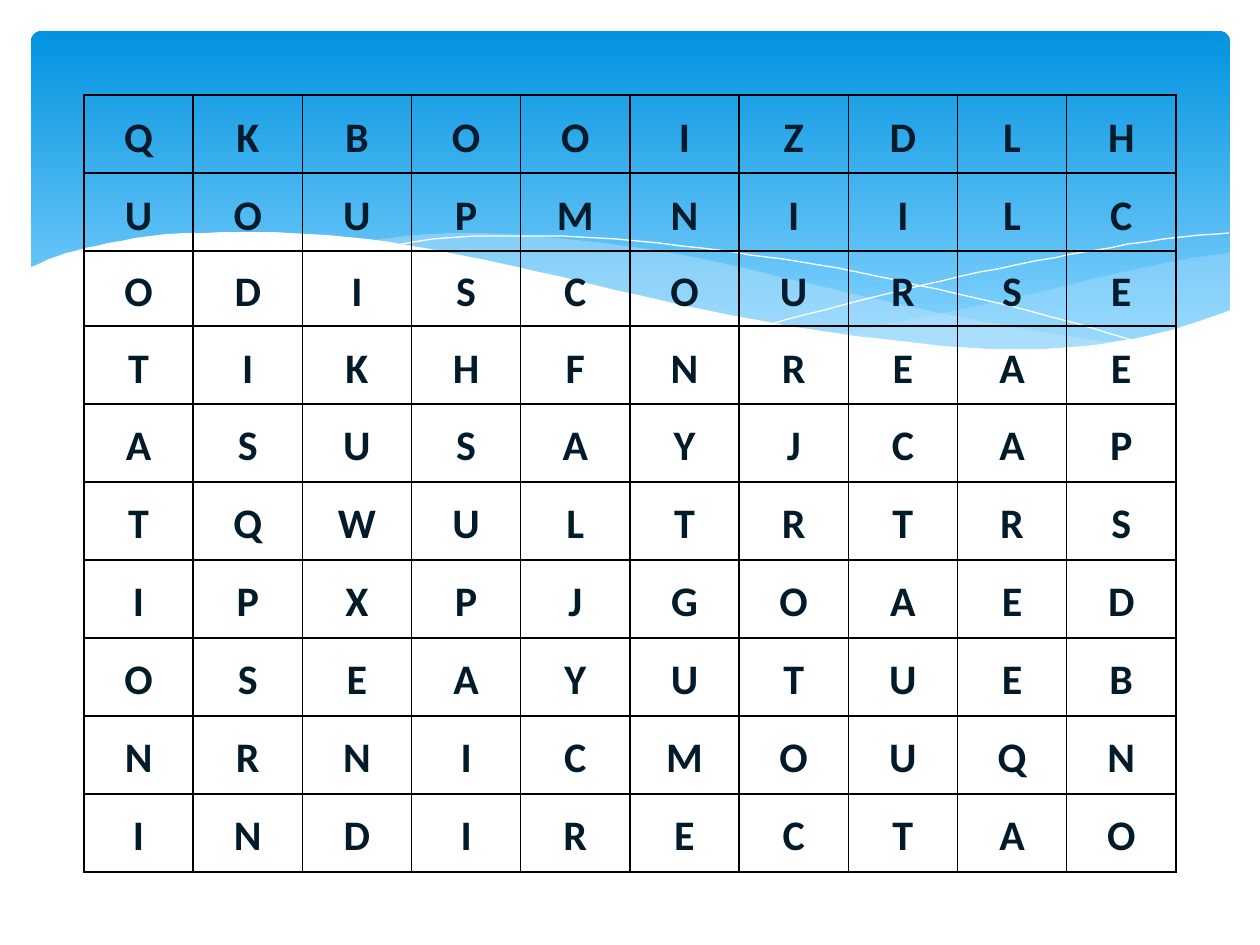
import pptx
import pptx.util
from lxml import etree
from pptx.dml.color import RGBColor
from pptx.enum.shapes import MSO_SHAPE
from pptx.enum.text import MSO_ANCHOR, PP_ALIGN
from pptx.oxml.ns import qn

EMU_PER_PX = 914400 // 126

SKY_TOP = RGBColor(0x02, 0x93, 0xE0)
SKY_BOTTOM = RGBColor(0x83, 0xD3, 0xFE)
WAVE = RGBColor(0xC6, 0xE7, 0xFC)
WHITE = RGBColor(0xFF, 0xFF, 0xFF)
BLACK = RGBColor(0x00, 0x00, 0x00)
INK = RGBColor(0x02, 0x1B, 0x2B)

LETTERS = [
    "QKBOOIZDLH",
    "UOUPMNIILC",
    "ODISCOURSE",
    "TIKHFNREAE",
    "ASUSAYJCAP",
    "TQWULTRTRS",
    "IPXPJGOAED",
    "OSEAYUTUEB",
    "NRNICMOUQN",
    "INDIRECTAO",
]
ROW_HEIGHTS = [78, 78, 75] + [78] * 7

RIGHT_WAVE_TOP = [(1230, 252), (1178, 261), (1123, 272), (1048, 290), (949, 312), (833, 334)]
RIGHT_WAVE_BOTTOM = [(833, 334), (888, 341), (954, 348), (1012, 350), (1076, 348),
                     (1130, 340), (1178, 330), (1230, 311)]
LONG_WAVE_TOP = [(1125, 344), (1055, 334), (977, 320), (890, 302), (793, 280), (717, 262),
                 (648, 249), (586, 241), (503, 234), (433, 234), (360, 241)]
LONG_WAVE_BOTTOM = [(360, 241), (431, 251), (509, 266), (619, 292), (713, 312), (799, 329),
                    (876, 340), (959, 349), (1031, 350), (1080, 349), (1125, 344)]
FALLING_LINE = [(389, 246), (433, 239), (488, 236), (546, 236), (616, 239), (701, 248),
                (766, 257), (838, 268), (916, 285), (1002, 304), (1095, 329), (1143, 343)]
RISING_LINE = [(772, 324), (847, 304), (942, 281), (1016, 265), (1091, 251), (1164, 239),
               (1229, 233)]
WHITE_EDGE = [(1231, 310), (1184, 326), (1133, 339), (1071, 347), (1019, 349), (959, 347),
              (892, 340), (816, 330), (730, 315), (634, 294), (563, 277), (460, 255),
              (368, 239), (290, 233), (223, 232), (150, 236), (96, 246), (58, 256), (29, 268)]
WHITE_BASE = [(29, 415), (1231, 415)]


def px(n):
    return pptx.util.Emu(n * EMU_PER_PX)


def smooth(points, steps=4):
    """Return a Catmull-Rom curve through the points."""
    padded = [points[0]] + points + [points[-1]]
    curve = [points[0]]
    for a, b, c, d in zip(padded, padded[1:], padded[2:], padded[3:]):
        for i in range(1, steps + 1):
            t = i / steps
            curve.append(tuple(
                (2 * q + (r - p) * t + (2 * p - 5 * q + 4 * r - s) * t ** 2
                 + (3 * q - p - 3 * r + s) * t ** 3) / 2
                for p, q, r, s in zip(a, b, c, d)))
    return curve


def add_path(s, points, close):
    builder = s.shapes.build_freeform(*points[0], scale=EMU_PER_PX)
    builder.add_line_segments(points[1:], close=close)
    sp = builder.convert_to_shape()
    sp.shadow.inherit = False
    return sp


def add_area(s, points, color, opacity=100):
    sp = add_path(s, points, True)
    sp.fill.solid()
    sp.fill.fore_color.rgb = color
    sp.line.fill.background()
    if opacity < 100:
        clr = sp._element.spPr.find(qn("a:solidFill"))[0]
        etree.SubElement(clr, qn("a:alpha"), val=str(opacity * 1000))


def add_hairline(s, points):
    sp = add_path(s, points, False)
    sp.fill.background()
    sp.line.color.rgb = WHITE
    sp.line.width = pptx.util.Pt(0)


def add_sky(s):
    sp = s.shapes.add_shape(MSO_SHAPE.ROUNDED_RECTANGLE, px(31), px(31), px(1199), px(340))
    sp.adjustments[0] = 0.03
    sp.shadow.inherit = False
    sp.line.fill.background()
    sp.fill.gradient()
    sp.fill.gradient_angle = 270
    top, bottom = sp.fill.gradient_stops
    top.color.rgb, top.position = SKY_TOP, 0
    bottom.color.rgb, bottom.position = SKY_BOTTOM, 0.9


def set_borders(cell):
    tcPr = cell._tc.get_or_add_tcPr()
    for side in ("lnL", "lnR", "lnT", "lnB"):
        ln = etree.SubElement(tcPr, qn(f"a:{side}"), w=str(pptx.util.Pt(1)))
        fill = etree.SubElement(ln, qn("a:solidFill"))
        etree.SubElement(fill, qn("a:srgbClr"), val=str(BLACK))


def fill_cell(cell, letter):
    set_borders(cell)
    cell.fill.background()
    cell.vertical_anchor = MSO_ANCHOR.MIDDLE
    cell.margin_left = cell.margin_right = px(9)
    cell.margin_top = cell.margin_bottom = 0
    p = cell.text_frame.paragraphs[0]
    p.text = letter
    p.alignment = PP_ALIGN.CENTER
    p.line_spacing = 1.15
    p.font.name = "Calibri"
    p.font.size = pptx.util.Pt(24)
    p.font.bold = True
    p.font.color.rgb = INK


def add_letter_grid(s):
    table = s.shapes.add_table(len(LETTERS), len(LETTERS[0]), px(84), px(95),
                               px(1092), px(sum(ROW_HEIGHTS))).table
    table.first_row = table.horz_banding = False
    for row, height, word in zip(table.rows, ROW_HEIGHTS, LETTERS):
        row.height = px(height)
        for cell, letter in zip(row.cells, word):
            fill_cell(cell, letter)


def main():
    prs = pptx.Presentation()
    prs.slide_width, prs.slide_height = px(1260), px(945)
    s = prs.slides.add_slide(prs.slide_layouts[6])
    add_sky(s)
    add_area(s, smooth(RIGHT_WAVE_TOP) + smooth(RIGHT_WAVE_BOTTOM), WAVE, 29)
    add_area(s, smooth(LONG_WAVE_TOP) + smooth(LONG_WAVE_BOTTOM), WAVE, 40)
    add_hairline(s, smooth(FALLING_LINE))
    add_hairline(s, smooth(RISING_LINE))
    add_area(s, smooth(WHITE_EDGE) + WHITE_BASE, WHITE)
    add_letter_grid(s)
    prs.save("out.pptx")


if __name__ == "__main__":
    main()
